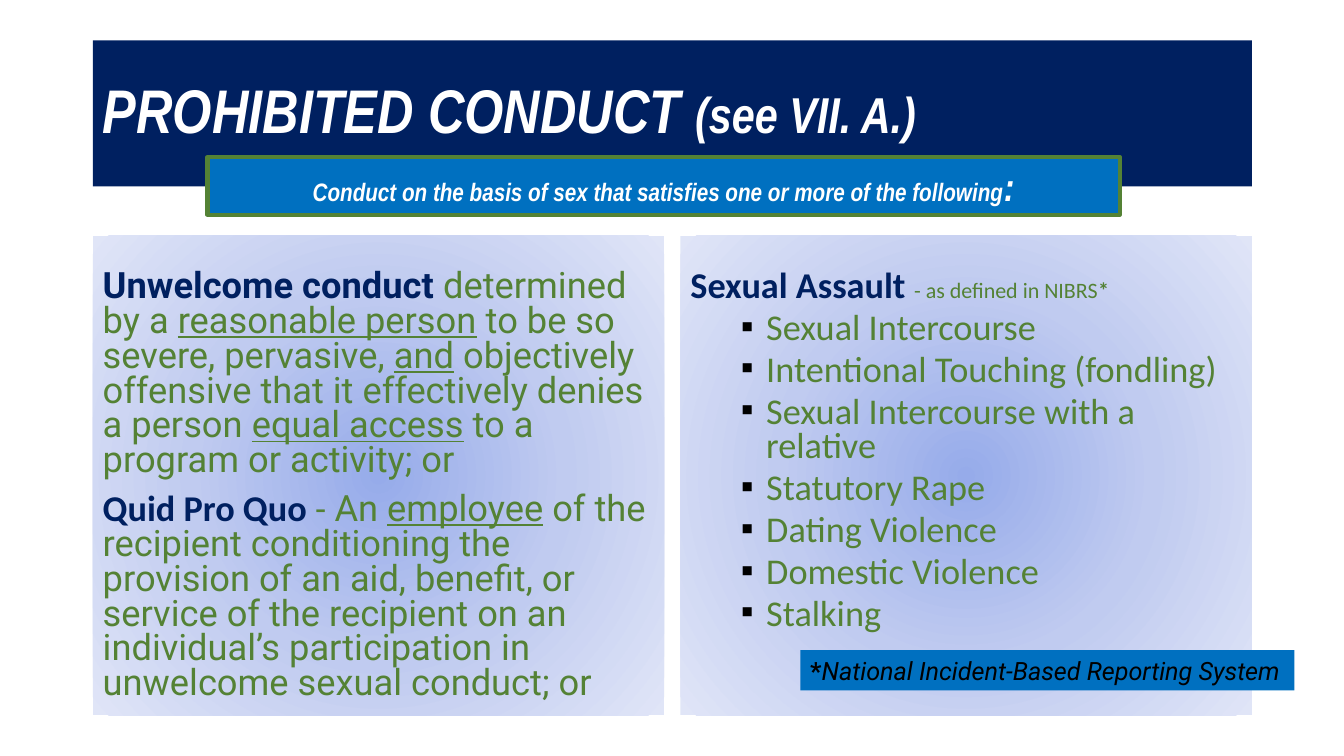
import pptx
import pptx.dml.color
import pptx.enum.shapes
import pptx.enum.text
import pptx.oxml
import pptx.oxml.ns
import pptx.util
from pptx.util import Cm

COLORS = {
    "navy": "002060", "blue": "0070C0", "green": "548235",
    "white": "FFFFFF", "black": "000000",
    "glow_center": "96ABEA", "glow_middle": "C0CBF0", "glow_edge": "E0E5F7",
}
ANCHOR = pptx.enum.text.MSO_ANCHOR
ALIGN = pptx.enum.text.PP_ALIGN
NS = pptx.oxml.ns.nsdecls("a")


def rgb(color):
    return pptx.dml.color.RGBColor.from_string(COLORS[color])


class ConductSlide:
    """Holds the slide and the style shared by its parts."""

    body_size = 25.9

    def __init__(self, presentation):
        self.slide = presentation.slides.add_slide(presentation.slide_layouts[6])

    def box(self, left, top, width, height, fill=None, anchor=ANCHOR.TOP):
        shape = self.slide.shapes.add_shape(
            pptx.enum.shapes.MSO_SHAPE.RECTANGLE,
            Cm(left), Cm(top), Cm(width), Cm(height))
        shape.shadow.inherit = False
        shape.line.fill.background()
        if fill:
            shape.fill.solid()
            shape.fill.fore_color.rgb = rgb(fill)
        shape.text_frame.word_wrap = True
        shape.text_frame.vertical_anchor = anchor
        return shape

    def panel(self, left):
        """A text panel with a radial glow."""
        shape = self.box(left, 5.94, 14.4, 12.09)
        shape.text_frame.margin_top = pptx.util.Pt(25)
        shape.fill.gradient()
        stops = "".join(
            f'<a:gs pos="{pos}"><a:srgbClr val="{COLORS[color]}"/></a:gs>'
            for pos, color in ((0, "glow_center"), (50000, "glow_middle"),
                               (100000, "glow_edge")))
        glow = pptx.oxml.parse_xml(
            f'<a:gradFill {NS} rotWithShape="1"><a:gsLst>{stops}</a:gsLst>'
            '<a:path path="circle"><a:fillToRect l="50000" t="50000" '
            'r="50000" b="50000"/></a:path></a:gradFill>')
        properties = shape.element.spPr
        properties.replace(properties.find(pptx.oxml.ns.qn("a:gradFill")), glow)
        return shape

    def paragraph(self, shape, runs, align=ALIGN.LEFT, spacing=None, before=0,
                  **style):
        """Add a paragraph; runs are (text, style) pairs over a shared style."""
        frame = shape.text_frame
        paragraph = frame.paragraphs[0] if not frame.text else frame.add_paragraph()
        paragraph.alignment = align
        paragraph.space_before = pptx.util.Pt(before)
        if spacing:
            paragraph.line_spacing = spacing
        self.set_font(paragraph.font, **style)
        for text, run_style in runs:
            run = paragraph.add_run()
            run.text = text
            self.set_font(run.font, **run_style)
        return paragraph

    def set_font(self, font, size=None, color=None, **flags):
        if size:
            font.size = pptx.util.Pt(size)
        if color:
            font.color.rgb = rgb(color)
        for flag, value in flags.items():
            setattr(font, flag, value)

    def bullet(self, shape, text):
        paragraph = self.paragraph(
            shape, [(text, {})], spacing=0.8, before=5,
            name="Calibri", size=self.body_size, color="green")
        properties = paragraph._p.get_or_add_pPr()
        properties.set("marL", str(Cm(1.91)))
        properties.set("indent", str(-Cm(0.64)))
        marks = (f'<a:buClr {NS}><a:srgbClr val="{COLORS["black"]}"/></a:buClr>',
                 f'<a:buFont {NS} typeface="Arial"/>', f'<a:buChar {NS} char="▪"/>')
        default_font = properties.find(pptx.oxml.ns.qn("a:defRPr"))
        for mark in marks:
            default_font.addprevious(pptx.oxml.parse_xml(mark))


def main():
    presentation = pptx.Presentation()
    presentation.slide_width, presentation.slide_height = Cm(33.87), Cm(19.05)
    page = ConductSlide(presentation)
    term = {"color": "navy", "bold": True}
    underlined = {"underline": True}
    headline = {"name": "Arial Narrow", "color": "white", "bold": True, "italic": True}

    # Title band
    title = page.box(2.34, 1.02, 29.21, 3.68, "navy", ANCHOR.MIDDLE)
    page.paragraph(title, [("PROHIBITED CONDUCT ", {"size": 44}),
                           ("(see VII. A.)", {"size": 36})],
                   spacing=0.9, **headline)

    # Left panel: unwelcome conduct and quid pro quo
    harassment = page.panel(2.34)
    body = {"spacing": 0.8, "size": page.body_size, "color": "green"}
    page.paragraph(harassment, [
        ("Unwelcome conduct ", term),
        ("determined by a ", {}),
        ("reasonable person", underlined),
        (" to be so severe, pervasive, ", {}),
        ("and", underlined),
        (" objectively offensive that it effectively denies a person ", {}),
        ("equal access", underlined),
        (" to a program or activity; or", {}),
    ], name="Roboto", **body)
    page.paragraph(harassment, [
        ("Quid Pro Quo ", {"name": "Calibri", **term}),
        ("- ", {"name": "Calibri"}),
        ("An ", {}),
        ("employee", underlined),
        (" of the recipient conditioning the provision of an aid, benefit, or "
         "service of the recipient on an individual’s participation in "
         "unwelcome sexual conduct; or", {}),
    ], before=10, name="Roboto", **body)

    # Right panel: kinds of sexual assault
    assault = page.panel(17.15)
    page.paragraph(assault, [
        ("Sexual Assault ", term),
        ("- as defined in NIBRS", {"size": 15.7}),
        ("*", {"size": 15.7, "bold": True}),
    ], name="Calibri", **body)
    for offense in ("Sexual Intercourse", "Intentional Touching (fondling)",
                    "Sexual Intercourse with a relative", "Statutory Rape",
                    "Dating Violence", "Domestic Violence", "Stalking"):
        page.bullet(assault, offense)

    # Banner across the title band
    banner = page.box(5.23, 3.96, 22.99, 1.45, "blue")
    banner.line.color.rgb = rgb("green")
    banner.line.width = pptx.util.Pt(3)
    page.paragraph(banner, [
        ("Conduct on the basis of sex that satisfies one or more of the following",
         {"size": 18}),
        (":", {"size": 28}),
    ], align=ALIGN.CENTER, **headline)

    # Footnote
    footnote = page.box(20.17, 16.38, 12.45, 1.02, "blue")
    page.paragraph(footnote, [
        ("*", {"bold": True}),
        ("National Incident-Based Reporting System", {"italic": True}),
    ], name="Roboto", size=18, color="black")

    presentation.save("out.pptx")


if __name__ == "__main__":
    main()
